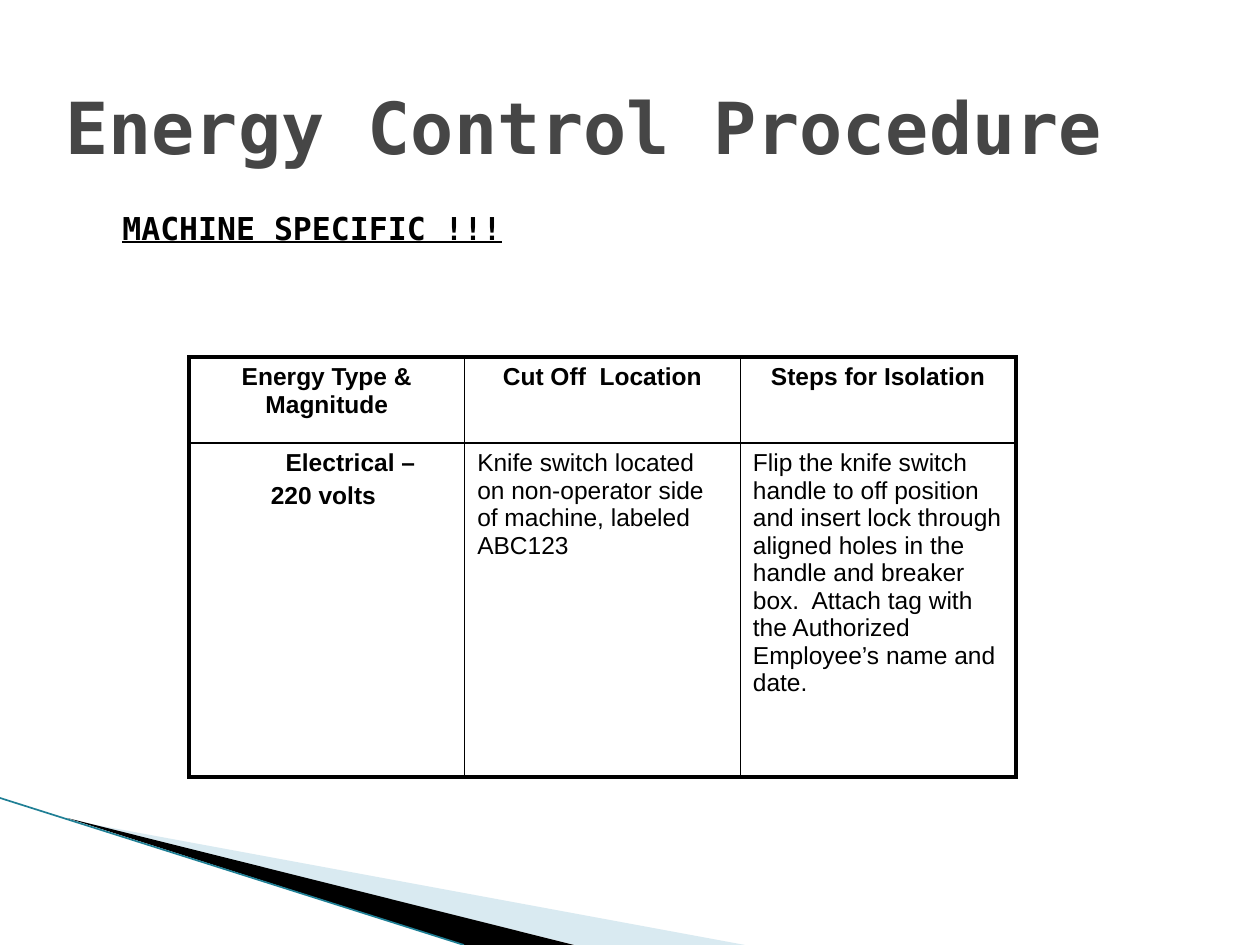
import pptx
import pptx.util
import pptx.dml.color
import pptx.enum.shapes
import pptx.enum.text
import pptx.oxml.ns
import lxml.etree

SCALE = 914400 / 126  # EMU in one px
ALIGN = pptx.enum.text.PP_ALIGN
ANCHOR = pptx.enum.text.MSO_ANCHOR
MONO = "DejaVu Sans Mono"

HEADS = ["Energy Type & Magnitude", "Cut Off  Location", "Steps for Isolation"]
STEPS = [
    "Electrical – \n220 volts ",
    "Knife switch located on non-operator side of machine, labeled  ABC123",
    "Flip the knife switch handle to off position and insert lock through "
    "aligned holes in the handle and breaker box.  Attach tag with the "
    "Authorized Employee’s name and date.",
]


def px(n):
    return pptx.util.Emu(round(n * SCALE))


def color(code):
    return pptx.dml.color.RGBColor.from_string(code)


def child(node, tag, **attrs):
    return lxml.etree.SubElement(node, pptx.oxml.ns.qn(tag), **attrs)


def write(frame, text, size=14, face="Arial", hue="000000", bold=False,
          under=False, align=ALIGN.LEFT, gap=0):
    """Fill a text frame, one paragraph per line of text."""
    frame.word_wrap = True
    for i, line in enumerate(text.split("\n")):
        para = frame.paragraphs[0] if i == 0 else frame.add_paragraph()
        para.alignment = align
        if i:
            para.space_before = pptx.util.Pt(gap)
        run = para.add_run()
        run.text = line
        font = run.font
        font.size, font.name = pptx.util.Pt(size), face
        font.bold, font.underline = bold, under
        font.color.rgb = color(hue)


def label(slide, box, text, anchor=ANCHOR.TOP, **form):
    frame = slide.shapes.add_textbox(*map(px, box)).text_frame
    write(frame, text, **form)
    frame.vertical_anchor = anchor


def wedge(slide, x, y, points, hue, alpha=100):
    """Draw a filled outline; points are relative to x, y."""
    dots = [(x + a, y + b) for a, b in points]
    form = slide.shapes.build_freeform(*dots[0], scale=SCALE)
    form.add_line_segments(dots[1:], close=True)
    shape = form.convert_to_shape()
    shape.shadow.inherit = False
    shape.line.fill.background()
    shape.fill.solid()
    shape.fill.fore_color.rgb = color(hue)
    if alpha < 100:
        tone = shape.fill._xPr.find(".//" + pptx.oxml.ns.qn("a:srgbClr"))
        child(tone, "a:alpha", val=str(alpha * 1000))


def sweep(slide, x, y, wide, high):
    """Bands rising from the bottom to the left edge of the box."""
    wedge(slide, x, y, [(69, 22), (wide, high), (575, high)], "A0CBDC", 40)
    wedge(slide, x, y, [(67, 20), (574, high), (464, high)], "000000")
    line = slide.shapes.add_connector(
        pptx.enum.shapes.MSO_CONNECTOR.STRAIGHT,
        px(x), px(y), px(x + 464), px(y + high))
    line.line.color.rgb = color("1F7F95")
    line.line.width = pptx.util.Pt(0.95)
    child(line._element.spPr, "a:effectLst")


def border(cell, sides):
    """Set the cell's edges from a dict of side to width in points."""
    props = cell._tc.get_or_add_tcPr()
    for side in "LRTB":
        width = str(pptx.util.Pt(sides[side]))
        edge = child(props, "a:ln" + side, w=width)
        child(child(edge, "a:solidFill"), "a:srgbClr", val="000000")


def grid(slide, x, y, wide, rows, data):
    """Table with a thick frame, thin inner lines and a bold header."""
    last = len(data[0]) - 1
    table = slide.shapes.add_table(
        len(data), last + 1, px(x), px(y), px(wide), px(sum(rows))).table
    table.first_row = table.horz_banding = False
    for col in table.columns:
        col.width = px(wide / (last + 1))
    for r, (high, texts) in enumerate(zip(rows, data)):
        table.rows[r].height = px(high)
        for c, text in enumerate(texts):
            cell = table.cell(r, c)
            strong = r == 0 or c == 0
            write(cell.text_frame, text, bold=strong, gap=3,
                  align=ALIGN.CENTER if strong else ALIGN.LEFT)
            outer = {"L": c == 0, "R": c == last,
                     "T": r == 0, "B": r == len(data) - 1}
            border(cell, {s: 2.25 if out else 1 for s, out in outer.items()})
            cell.fill.background()
    return table


def main():
    deck = pptx.Presentation()
    deck.slide_width, deck.slide_height = px(1260), px(945)
    slide = deck.slides.add_slide(deck.slide_layouts[6])

    # Corner decoration
    sweep(slide, 0, 798, 745, 147)

    # Headings
    label(slide, (53, 63, 1113, 126), "Energy Control Procedure",
          anchor=ANCHOR.MIDDLE, size=41, face=MONO, hue="464646", bold=True)
    label(slide, (110, 203, 731, 84), "MACHINE SPECIFIC !!!",
          size=18, face=MONO, bold=True, under=True)

    # Procedure table, with the energy type set in from the left
    table = grid(slide, 189, 357, 827, (86, 334), [HEADS, STEPS])
    kind = table.cell(1, 0).text_frame.paragraphs[0]
    kind._p.get_or_add_pPr().set("marL", str(px(54)))

    deck.save("out.pptx")


if __name__ == "__main__":
    main()
